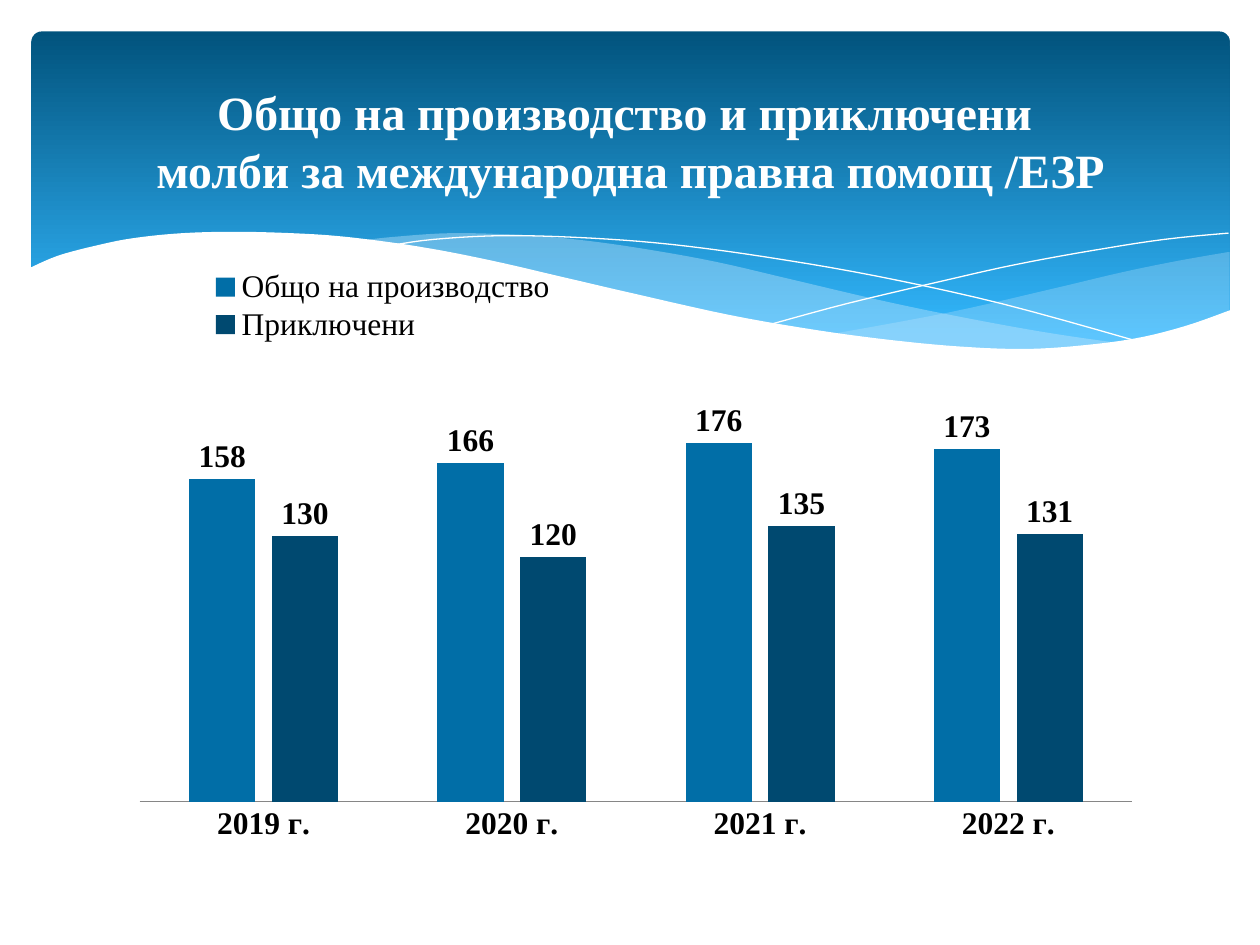
from dataclasses import dataclass

from lxml import etree
from pptx import Presentation
from pptx.chart.data import CategoryChartData
from pptx.dml.color import RGBColor
from pptx.enum.chart import (XL_CHART_TYPE, XL_LABEL_POSITION,
                             XL_LEGEND_POSITION, XL_TICK_MARK)
from pptx.enum.shapes import MSO_SHAPE
from pptx.enum.text import MSO_ANCHOR, PP_ALIGN
from pptx.oxml.ns import qn
from pptx.util import Pt

COLUMN = XL_CHART_TYPE.COLUMN_CLUSTERED
ABOVE = XL_LABEL_POSITION.OUTSIDE_END
TOP = XL_LEGEND_POSITION.TOP
NO_TICK = XL_TICK_MARK.NONE
ROUND = MSO_SHAPE.ROUNDED_RECTANGLE
MIDDLE = MSO_ANCHOR.MIDDLE
CENTER = PP_ALIGN.CENTER

PX = 9144  # EMU in one px, 100 px to the inch
STEPS = 5  # points drawn between two knots of a curve
SERIF = "Times New Roman"
WHITE, BLACK, PALE = "FFFFFF", "000000", "C6E7FC"
Curve = list[tuple[float, float]]


@dataclass
class Wave:
    curves: list[Curve]  # a corner lies between two curves
    fill: str = ""
    alpha: int = 100
    line: str = ""


@dataclass
class Bars:
    name: str
    values: tuple[int, ...]
    color: str


WAVES = [
    Wave([[(975, 200), (935, 207), (891, 216), (832, 230), (753, 248),
           (661, 265)],
          [(661, 265), (705, 271), (757, 276), (814, 278), (863, 275),
           (905, 269), (942, 259), (976, 247)],
          [(976, 247), (976, 200)]], PALE, 29),
    Wave([[(893, 273), (837, 265), (775, 254), (706, 240), (629, 222),
           (569, 208), (514, 198), (465, 191), (420, 187), (361, 185),
           (313, 188), (286, 191)],
          [(286, 191), (342, 199), (404, 211), (449, 222), (530, 240),
           (601, 255), (665, 266), (722, 274), (785, 278), (838, 278),
           (893, 273)]], PALE, 40),
    Wave([[(309, 195), (344, 190), (401, 187), (469, 189), (533, 194),
           (608, 204), (695, 219), (795, 241), (907, 272)]], line=WHITE),
    Wave([[(613, 257), (672, 241), (748, 223), (806, 210), (866, 199),
           (924, 190), (975, 185)]], line=WHITE),
    Wave([[(977, 246), (940, 259), (899, 269), (850, 275), (809, 277),
           (761, 275), (708, 270), (648, 262), (579, 250), (503, 233),
           (447, 220), (391, 207), (340, 197), (292, 190), (250, 186),
           (193, 184), (146, 185), (106, 189), (76, 195), (46, 203),
           (23, 213)],
          [(23, 213), (23, 329), (23, 329)],
          [(23, 329), (977, 329)]], WHITE),
]
YEARS = [f"{year} г." for year in range(2019, 2023)]
SERIES = [Bars("Общо на производство", (158, 166, 176, 173), "016EA7"),
          Bars("Приключени", (130, 120, 135, 131), "004970")]
TITLE = ["Общо на производство и приключени ",
         "молби за международна правна помощ /ЕЗР"]


def box(*sides: int) -> list[int]:
    return [side * PX for side in sides]


def tint(code: str) -> RGBColor:
    return RGBColor.from_string(code)


def style(item, **values) -> None:
    for key, value in values.items():
        setattr(item, key, value)


def set_font(font, size: float, color: str, bold: bool = False) -> None:
    style(font, name=SERIF, size=Pt(size), bold=bold)
    font.color.rgb = tint(color)


def smooth(knots: Curve) -> Curve:
    """Catmull-Rom curve through the knots."""
    ends = [knots[0], *knots, knots[-1]]
    points = []
    for a, b, c, d in zip(ends, ends[1:], ends[2:], ends[3:]):
        for step in range(STEPS):
            t = step / STEPS
            points.append(tuple(
                (2 * q + (r - p) * t + (2 * p - 5 * q + 4 * r - s) * t ** 2
                 + (3 * q - p - 3 * r + s) * t ** 3) / 2
                for p, q, r, s in zip(a, b, c, d)))
    return points + [knots[-1]]


def draw_wave(shapes, wave: Wave) -> None:
    points = [(x * PX, y * PX)
              for curve in wave.curves for x, y in smooth(curve)]
    pen = shapes.build_freeform(*points[0], scale=1.0)
    pen.add_line_segments(points[1:], close=bool(wave.fill))
    shape = pen.convert_to_shape()
    shape.shadow.inherit = False
    if wave.fill:
        shape.fill.solid()
        shape.fill.fore_color.rgb = tint(wave.fill)
        shape.line.fill.background()
    else:
        shape.fill.background()
        shape.line.color.rgb = tint(wave.line)
        shape.line.width = 0
    if wave.alpha < 100:
        color = shape.fill._xPr.find(".//" + qn("a:srgbClr"))
        etree.SubElement(color, qn("a:alpha"), val=str(wave.alpha * 1000))


def draw_band(shapes) -> None:
    band = shapes.add_shape(ROUND, *box(25, 25, 951, 270))
    band.adjustments[0] = 0.03
    band.shadow.inherit = False
    band.line.fill.background()
    band.fill.gradient()
    band.fill.gradient_angle = 270
    stops = zip(band.fill.gradient_stops, (0, 0.9), ("01537D", "33B8FE"))
    for stop, place, color in stops:
        stop.position = place
        stop.color.rgb = tint(color)


def place(parent, index: int, inner: bool, **sides: float) -> None:
    """Give a chart part a fixed layout."""
    for old in parent.findall(qn("c:layout")):
        parent.remove(old)
    layout = etree.Element(qn("c:layout"))
    parent.insert(index, layout)
    manual = etree.SubElement(layout, qn("c:manualLayout"))
    values = {"layoutTarget": "inner"} if inner else {}
    values |= {"xMode": "edge", "yMode": "edge", **sides}
    for key, value in values.items():
        etree.SubElement(manual, qn("c:" + key), val=str(value))


def draw_chart(shapes) -> None:
    data = CategoryChartData()
    data.categories = YEARS
    for bars in SERIES:
        data.add_series(bars.name, bars.values)
    chart = shapes.add_chart(COLUMN, *box(92, 202, 815, 480), data).chart
    style(chart, has_title=False, has_legend=True)
    style(chart.font, name="Calibri", size=Pt(18))
    chart.font.color.rgb = tint(BLACK)

    # Legend
    style(chart.legend, position=TOP, include_in_layout=False)
    set_font(chart.legend.font, 18, BLACK)
    place(chart.legend._element, 1, False, x=0.09, y=0.02, w=0.34, h=0.13)

    # Axes
    axis = chart.category_axis
    style(axis, major_tick_mark=NO_TICK, minor_tick_mark=NO_TICK)
    axis.format.line.color.rgb = tint("868686")
    set_font(axis.tick_labels.font, 18, BLACK, True)
    style(chart.value_axis, visible=False, has_major_gridlines=False,
          minimum_scale=0, maximum_scale=200)

    # Bars and their labels
    plot = chart.plots[0]
    style(plot, gap_width=150, overlap=-25, vary_by_categories=False)
    for row, bars in zip(plot.series, SERIES):
        row.format.fill.solid()
        row.format.fill.fore_color.rgb = tint(bars.color)
        style(row.data_labels, show_value=True, position=ABOVE)
        set_font(row.data_labels.font, 18, BLACK, True)
    area = chart._chartSpace.find(".//" + qn("c:plotArea"))
    place(area, 0, True, x=0.023, y=0.23, w=0.967, h=0.675)


def draw_title(shapes) -> None:
    frame = shapes.add_textbox(*box(20, 29, 961, 165)).text_frame
    style(frame, word_wrap=True, vertical_anchor=MIDDLE)
    frame.text = "\n".join(TITLE)
    for line in frame.paragraphs:
        line.alignment = CENTER
        set_font(line.runs[0].font, 27.3, WHITE, True)


def main() -> None:
    deck = Presentation()
    style(deck, slide_width=1000 * PX, slide_height=750 * PX)
    shapes = deck.slides.add_slide(deck.slide_layouts[6]).shapes
    draw_band(shapes)
    for wave in WAVES:
        draw_wave(shapes, wave)
    draw_chart(shapes)
    draw_title(shapes)
    deck.save("out.pptx")


if __name__ == "__main__":
    main()
